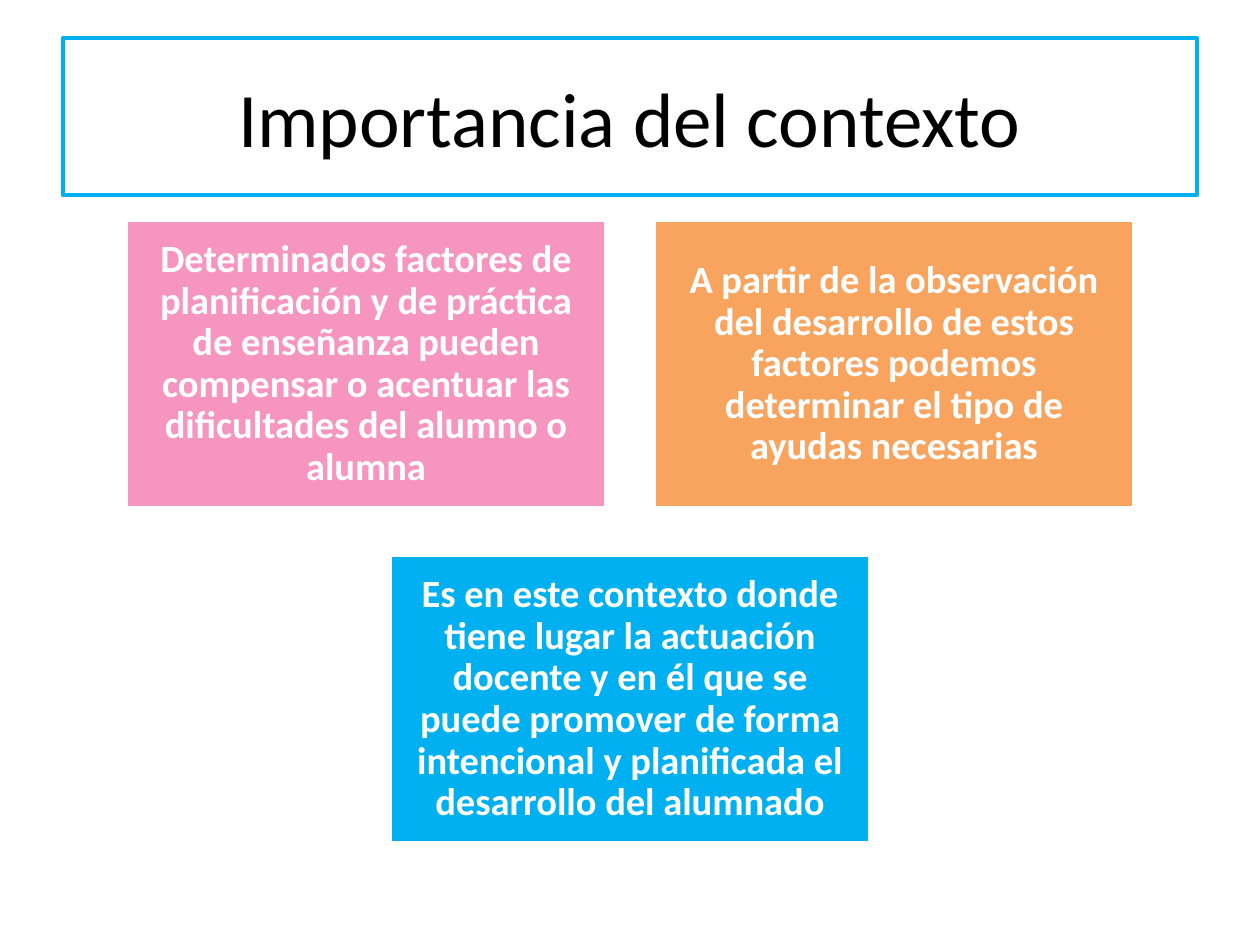
"""Build the slide on the importance of context: a framed title and three cards."""
from dataclasses import dataclass

from pptx import Presentation
from pptx.dml.color import RGBColor
from pptx.enum.shapes import MSO_SHAPE
from pptx.enum.text import MSO_ANCHOR, PP_ALIGN
from pptx.util import Inches, Pt

HUES = {"blue": "00B0F0", "pink": "F595C0", "orange": "F8A45E",
        "white": "FFFFFF", "black": "000000"}
LEFT, TOP = 1, 1.75
WIDE, HIGH = 3.81, 2.28
GAP = 0.38


@dataclass
class Card:
    """A coloured box at a column and row of the grid."""
    col: float
    row: float
    hue: str
    text: str


CARDS = [
    Card(0, 0, "pink", "Determinados factores de planificación y de práctica de enseñanza "
         "pueden compensar o acentuar las dificultades del alumno o alumna"),
    Card(1, 0, "orange", "A partir de la observación del desarrollo de estos factores "
         "podemos determinar el tipo de ayudas necesarias"),
    Card(0.5, 1, "blue", "Es en este contexto donde tiene lugar la actuación docente y en él "
         "que se puede promover de forma intencional y planificada el desarrollo del alumnado"),
]


def tint(name: str) -> RGBColor:
    """Look up a colour by name."""
    return RGBColor.from_string(HUES[name])


def edge(shape, hue: str, width: float) -> None:
    """Outline a shape."""
    shape.line.color.rgb = tint(hue)
    shape.line.width = Pt(width)


def write(shape, text: str, *, size: float, hue: str, bold: bool = False,
          space: float = 1, inset: float = 0.1) -> None:
    """Set centred text in a shape."""
    frame = shape.text_frame
    frame.word_wrap = True
    frame.vertical_anchor = MSO_ANCHOR.MIDDLE
    frame.margin_left = frame.margin_right = Inches(inset)
    frame.margin_top = frame.margin_bottom = Inches(min(inset, 0.09))
    para = frame.paragraphs[0]
    para.alignment = PP_ALIGN.CENTER
    para.line_spacing = space
    run = para.add_run()
    run.text = text
    font = run.font
    font.name, font.size, font.bold = "Calibri", Pt(size), bold
    font.color.rgb = tint(hue)


def draw(slide, card: Card) -> None:
    """Draw one card on the grid."""
    left = LEFT + card.col * (WIDE + GAP)
    top = TOP + card.row * (HIGH + GAP)
    box = slide.shapes.add_shape(MSO_SHAPE.RECTANGLE, Inches(left), Inches(top),
                                 Inches(WIDE), Inches(HIGH))
    box.shadow.inherit = False
    box.fill.solid()
    box.fill.fore_color.rgb = tint(card.hue)
    edge(box, "white", 2)
    write(box, card.text, size=22, hue="white", bold=True, space=0.9, inset=0.09)


def main() -> None:
    """Build and save the deck."""
    deck = Presentation()
    deck.slide_width, deck.slide_height = Inches(10), Inches(7.5)
    slide = deck.slides.add_slide(deck.slide_layouts[5])
    title = slide.shapes.title
    title.left, title.top = Inches(0.5), Inches(0.3)
    title.width, title.height = Inches(9), Inches(1.25)
    edge(title, "blue", 2.25)
    write(title, "Importancia del contexto", size=44, hue="black")
    for card in CARDS:
        draw(slide, card)
    deck.save("out.pptx")


if __name__ == "__main__":
    main()
